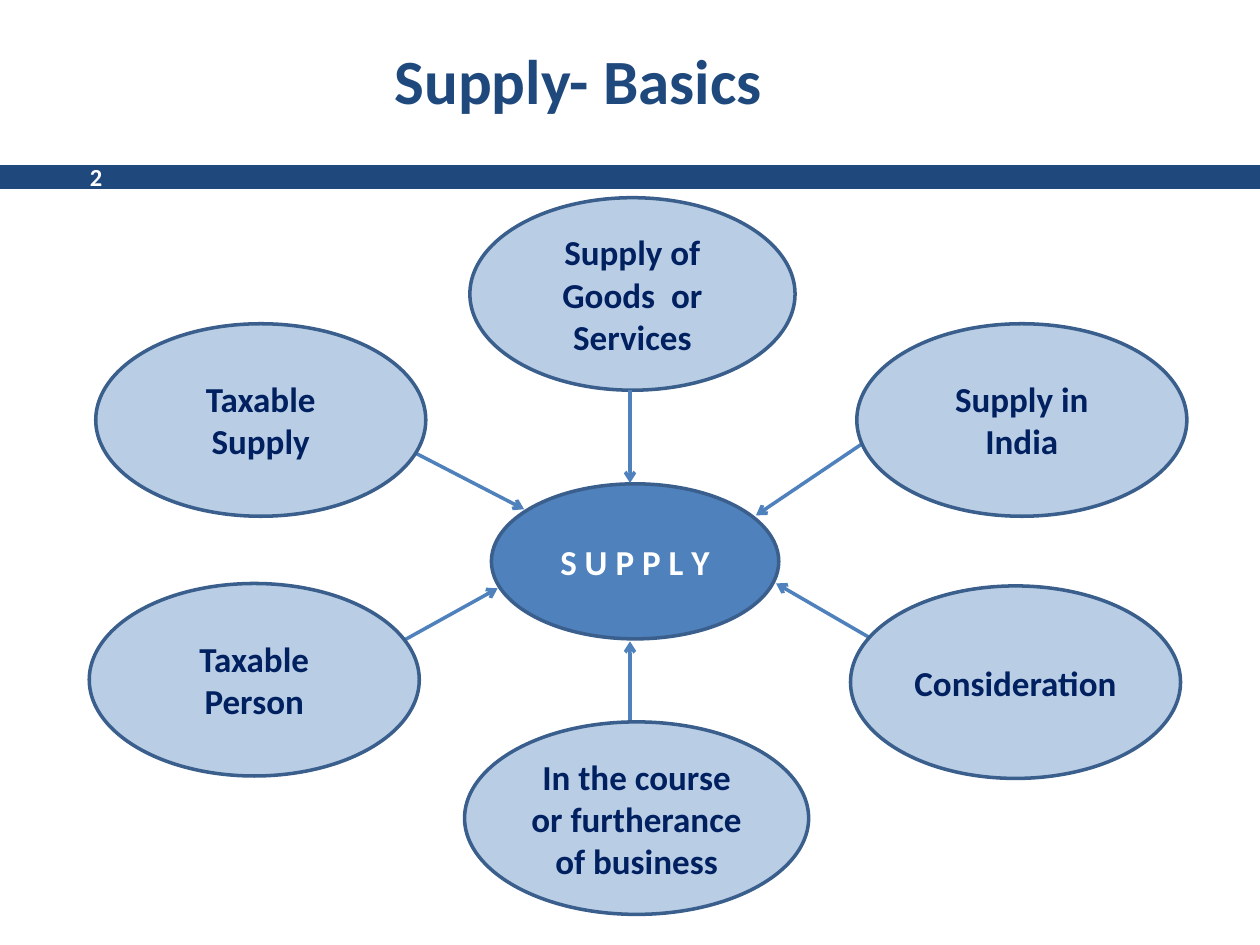
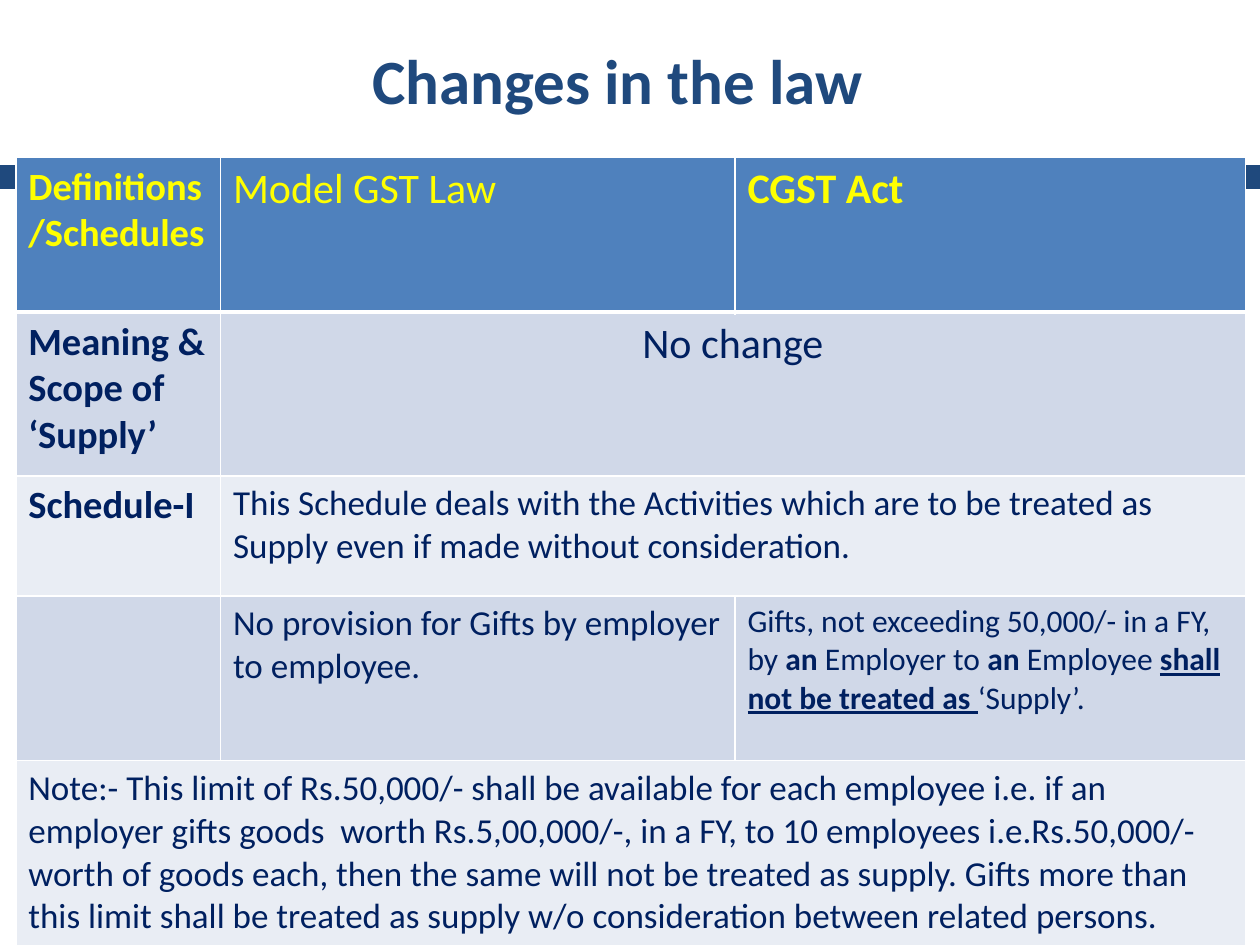
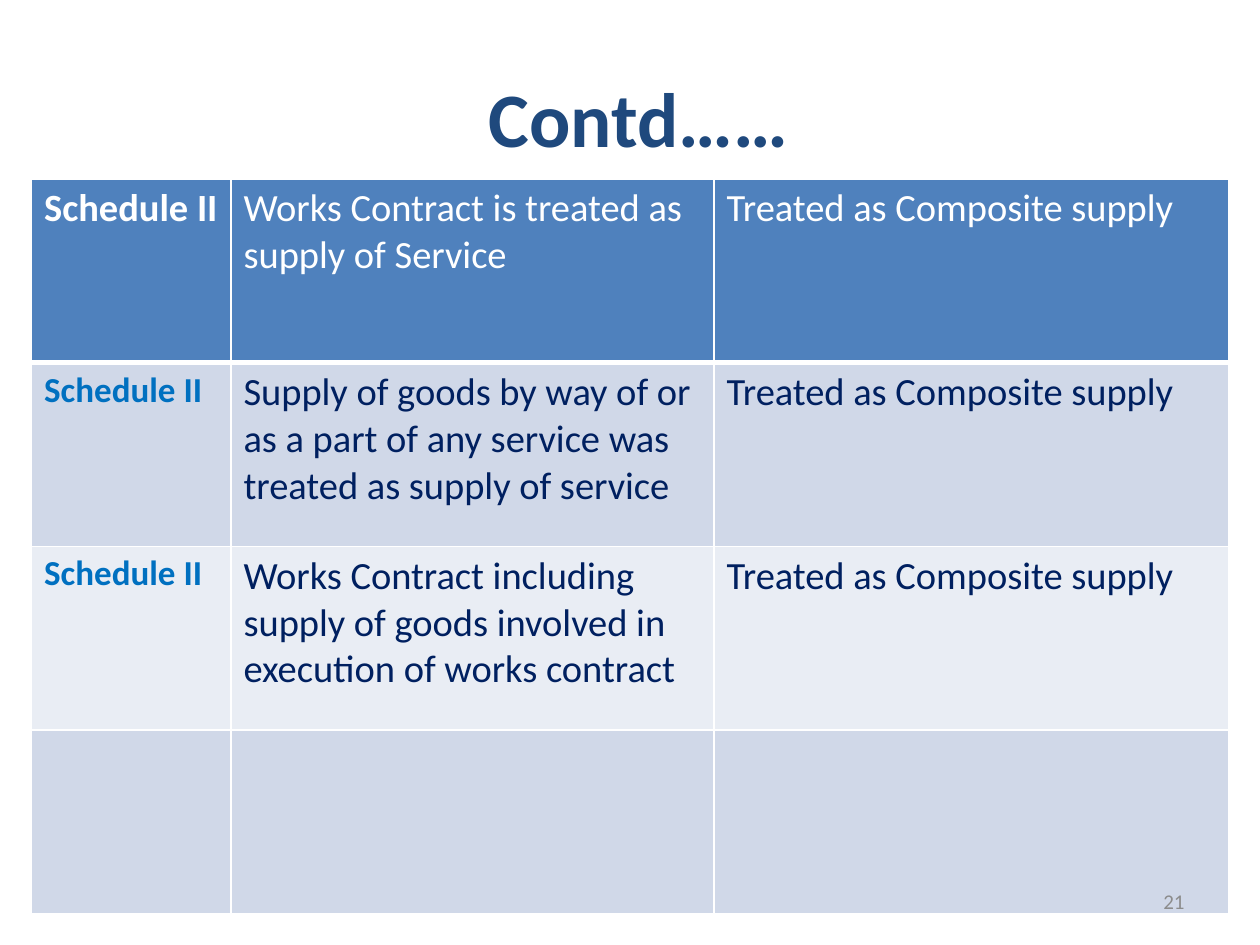
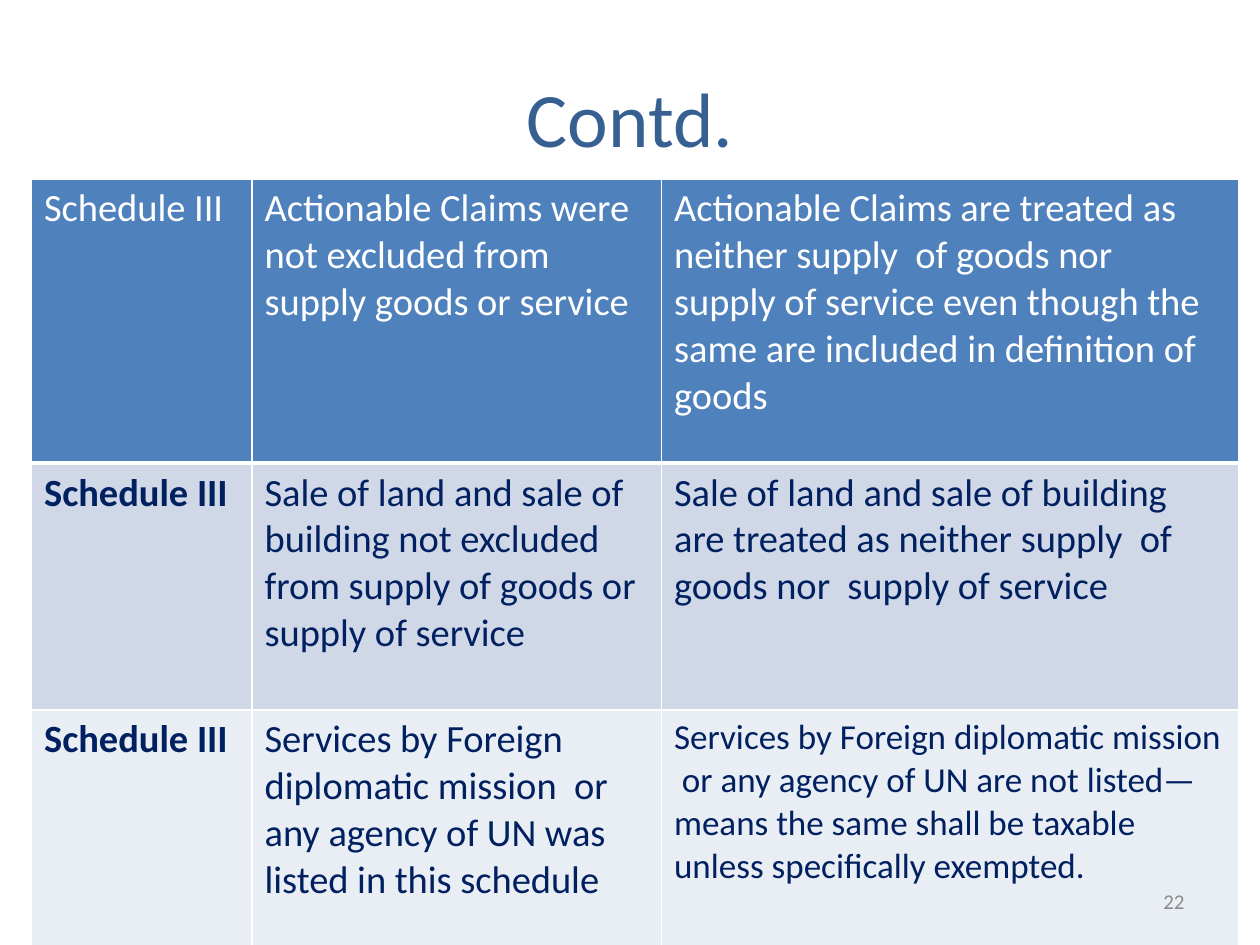
"""Build four slides on the meaning of supply and the changes in the GST law."""
import pptx
import pptx.dml.color
import pptx.enum.shapes
import pptx.enum.text
import pptx.oxml
import pptx.oxml.ns
import pptx.util

Pt = pptx.util.Pt
RGBColor = pptx.dml.color.RGBColor
ALIGN = pptx.enum.text.PP_ALIGN
MIDDLE = pptx.enum.text.MSO_ANCHOR.MIDDLE
SHAPE = pptx.enum.shapes.MSO_SHAPE

WHITE = RGBColor(0xFF, 0xFF, 0xFF)
BAND_BLUE = RGBColor(0x1F, 0x49, 0x7D)
SOFT_BLUE = RGBColor(0x37, 0x60, 0x92)
ACCENT = RGBColor(0x4F, 0x81, 0xBD)
PALE_BLUE = RGBColor(0xB9, 0xCD, 0xE5)
OUTLINE = RGBColor(0x3A, 0x5F, 0x8C)
NAVY = RGBColor(0x00, 0x20, 0x60)
BRIGHT_BLUE = RGBColor(0x00, 0x70, 0xC0)
YELLOW = RGBColor(0xFF, 0xFF, 0x00)
GREY = RGBColor(0x8C, 0x8C, 0x8C)
ROW_FILLS = (RGBColor(0xE9, 0xED, 0xF4), RGBColor(0xD0, 0xD8, 0xE8))

FONT = "Calibri"
TITLE_ONLY = 5


def write(frame, text, size=22, color=NAVY, bold=False, align=None, leading=None):
    """Write a string, or a list of (string, emphasis) pairs, as one paragraph."""
    frame.word_wrap = True
    paragraph = frame.paragraphs[0]
    paragraph.alignment = align
    if leading:
        paragraph.line_spacing = Pt(leading)
    pieces = [(text, "")] if isinstance(text, str) else text
    for words, emphasis in pieces:
        run = paragraph.add_run()
        run.text = words
        run.font.name = FONT
        run.font.size = Pt(size)
        run.font.color.rgb = color
        run.font.bold = bold or "b" in emphasis
        run.font.underline = "u" in emphasis


class Deck:
    """Hold the presentation, its style and the current slide."""

    def __init__(self):
        self.presentation = pptx.Presentation()
        self.presentation.slide_width = Pt(720)
        self.presentation.slide_height = Pt(540)
        self.slide = None

    def titled_slide(self, title, box=(36, 21.6, 648, 90), indent=0, fill=None, **style):
        """Start a slide and place its title."""
        layout = self.presentation.slide_layouts[TITLE_ONLY]
        self.slide = self.presentation.slides.add_slide(layout)
        heading = self.slide.shapes.title
        heading.left, heading.top, heading.width, heading.height = map(Pt, box)
        if fill is not None:
            heading.fill.solid()
            heading.fill.fore_color.rgb = fill
        frame = heading.text_frame
        frame.vertical_anchor = MIDDLE
        frame.margin_left = Pt(7.2 + indent)
        style = {"size": 44, "color": BAND_BLUE, "bold": True, **style}
        write(frame, title, align=ALIGN.CENTER, **style)

    def banded_slide(self, title, left, width, indent=0):
        """Start a slide whose title stands above the dark band."""
        self.titled_slide(title, (left, 15, width, 73.5), indent, WHITE, size=36, leading=30)
        self.shape(SHAPE.RECTANGLE, (0, 94.3, 720, 13.7), BAND_BLUE)

    def shape(self, kind, box, fill, outline=None):
        """Add a filled preset shape."""
        shape = self.slide.shapes.add_shape(kind, *map(Pt, box))
        shape.shadow.inherit = False
        shape.fill.solid()
        shape.fill.fore_color.rgb = fill
        if outline is None:
            shape.line.fill.background()
        else:
            shape.line.color.rgb = outline
            shape.line.width = Pt(2)
        return shape

    def oval(self, text, box, fill=PALE_BLUE, color=NAVY):
        """Add an outlined ellipse with centred text."""
        frame = self.shape(SHAPE.OVAL, box, fill, OUTLINE).text_frame
        frame.vertical_anchor = MIDDLE
        write(frame, text, size=20, color=color, bold=True, align=ALIGN.CENTER)

    def arrow(self, start, end):
        """Add a straight line with an open arrowhead at its end."""
        line = self.slide.shapes.add_connector(
            pptx.enum.shapes.MSO_CONNECTOR.STRAIGHT, *map(Pt, start + end))
        line.line.color.rgb = ACCENT
        line.line.width = Pt(2)
        outline = line.line._get_or_add_ln()
        pptx.oxml.ns.qn("a:tailEnd")
        head = outline.makeelement(pptx.oxml.ns.qn("a:tailEnd"), {"type": "arrow"})
        outline.append(head)
        properties = outline.getparent()
        properties.append(properties.makeelement(pptx.oxml.ns.qn("a:effectLst"), {}))

    def page_number(self, number, box=(516, 500.5, 168, 28.8), **style):
        """Add the right-aligned page number."""
        frame = self.slide.shapes.add_textbox(*map(Pt, box)).text_frame
        frame.vertical_anchor = MIDDLE
        frame.margin_top = frame.margin_bottom = 0
        style = {"size": 12, "color": GREY, **style}
        write(frame, number, align=ALIGN.RIGHT, **style)

    def borders(self, cell, bottom):
        """Draw white lines round a cell."""
        properties = cell._tc.get_or_add_tcPr()
        for index, (side, width) in enumerate(
                (("L", 1), ("R", 1), ("T", 1), ("B", bottom))):
            properties.insert(index, pptx.oxml.parse_xml(
                f'<a:ln{side} {pptx.oxml.ns.nsdecls("a")} w="{Pt(width)}">'
                f'<a:solidFill><a:srgbClr val="{WHITE}"/></a:solidFill></a:ln{side}>'))

    def table(self, left, top, widths, heights, rows, header_color=WHITE):
        """Add a table of (text, style) cells; None continues the cell to its left."""
        grid = self.slide.shapes.add_table(
            len(heights), len(widths), Pt(left), Pt(top),
            Pt(sum(widths)), Pt(sum(heights))).table
        for column, width in zip(grid.columns, widths):
            column.width = Pt(width)
        for r, (height, row) in enumerate(zip(heights, rows)):
            grid.rows[r].height = Pt(height)
            for c, content in enumerate(row):
                cell = grid.cell(r, c)
                cell.fill.solid()
                cell.fill.fore_color.rgb = ROW_FILLS[r % 2] if r else ACCENT
                self.borders(cell, 1 if r else 3)
                if content:
                    text, style = content
                    style = {"color": NAVY if r else header_color, **style}
                    write(cell.text_frame, text, **style)
            spanned = [c for c, content in enumerate(row) if content is None]
            if spanned:
                grid.cell(r, spanned[0] - 1).merge(grid.cell(r, spanned[-1]))


def supply_basics(deck):
    """Show the six conditions around supply."""
    deck.banded_slide("Supply- Basics", 36.7, 587.5)
    deck.page_number("2", (8.6, 94.3, 57, 13.7), size=14, color=WHITE, bold=True)
    deck.oval("S U P P L Y", (280.8, 276.5, 164.2, 88.6), ACCENT, WHITE)
    deck.oval("Supply of Goods  or Services", (268.5, 113, 185.8, 110))
    for start, end in (
            ((360, 223), (360, 276)),
            ((360, 412), (360, 366.5)),
            ((225.4, 252.7), (299.5, 291)),
            ((498, 250), (432, 294.5)),
            ((229.7, 366.5), (284.4, 336.2)),
            ((498, 365), (443.5, 333.4))):
        deck.arrow(start, end)
    conditions = (
        ("Taxable Person", 51, 333.4, 188.6),
        ("In the course or furtherance of business", 265.5, 412.5, 196.6),
        ("Consideration", 486, 334.8, 188.6),
        ("Taxable Supply", 54.7, 185, 188.6),
        ("Supply in India", 489.6, 185, 188.6))
    for condition, left, top, width in conditions:
        deck.oval(condition, (left, top, width, 110))


def changes_in_law(deck):
    """Compare the model law with the act."""
    deck.banded_slide("Changes in the law", 59.8, 570.2, indent=16)
    gifts = [
        ("Gifts, not exceeding 50,000/- in a FY, by ", ""), ("an", "b"),
        (" Employer to ", ""), ("an", "b"), (" Employee ", ""),
        ("shall not be treated as ", "bu"), ("‘Supply’.", "")]
    note = (
        "Note:- This limit of Rs.50,000/- shall be available for each employee i.e. "
        "if an employer gifts goods  worth Rs.5,00,000/-, in a FY, to 10 employees "
        "i.e.Rs.50,000/-worth of goods each, then the same will not be treated as "
        "supply. Gifts more than this limit shall be treated as supply w/o "
        "consideration between related persons.")
    schedule = ("This Schedule deals with the Activities which are to be treated as "
                "Supply even if made without consideration.")
    label = {"bold": True}
    body = {"size": 20}
    deck.table(9, 89.8, (117, 294, 291.6), (88.6, 93.7, 68.6, 94, 113), (
        (("Definitions/Schedules", label), ("Model GST Law", {"size": 24}),
         ("CGST Act", {"size": 24, "bold": True})),
        (("Meaning & Scope of  ‘Supply’", label),
         ("No change", {"size": 24, "align": ALIGN.CENTER}), None),
        (("Schedule-I", label), (schedule, body), None),
        ((), ("No provision for Gifts by employer to employee.", body),
         (gifts, {"size": 18})),
        ((note, body), None, None)), YELLOW)


def schedule_two(deck):
    """List the entries of Schedule II."""
    deck.titled_slide("Contd……", indent=10)
    label = ("Schedule II", {"size": 20, "color": BRIGHT_BLUE, "bold": True})
    composite = ("Treated as Composite supply", {})
    deck.table(18, 102.2, (114, 276, 294), (105,) * 4, (
        (("Schedule II", {"bold": True}),
         ("Works Contract is treated as supply of Service", {}), composite),
        (label, ("Supply of goods by way of or as a part of any service was "
                 "treated as supply of service", {}), composite),
        (label, ("Works Contract including supply of goods involved in "
                 "execution of works contract", {}), composite),
        ((), (), ())))
    deck.page_number("21")


def schedule_three(deck):
    """List the entries of Schedule III."""
    deck.titled_slide("Contd.", color=SOFT_BLUE, bold=False)
    label = ("Schedule III", {"bold": True})
    deck.table(18, 102.2, (126, 234, 330), (162.5, 141, 136.5), (
        (("Schedule III", {}),
         ("Actionable Claims were not excluded from supply goods or service", {}),
         ("Actionable Claims are treated as neither supply  of goods nor  supply of "
          "service even though the same are included in definition of goods", {})),
        (label,
         ("Sale of land and sale of building not excluded from supply of goods or "
          "supply of service", {}),
         ("Sale of land and sale of building are treated as neither supply  of goods "
          "nor  supply of service", {})),
        (label,
         ("Services by Foreign diplomatic mission  or any agency of UN was listed in "
          "this schedule", {}),
         ("Services by Foreign diplomatic mission  or any agency of UN are not "
          "listed—means the same shall be taxable unless specifically exempted.",
          {"size": 20}))))
    deck.page_number("22")


def main():
    """Build and save the slides."""
    deck = Deck()
    for build in (supply_basics, changes_in_law, schedule_two, schedule_three):
        build(deck)
    deck.presentation.save("out.pptx")


if __name__ == "__main__":
    main()
